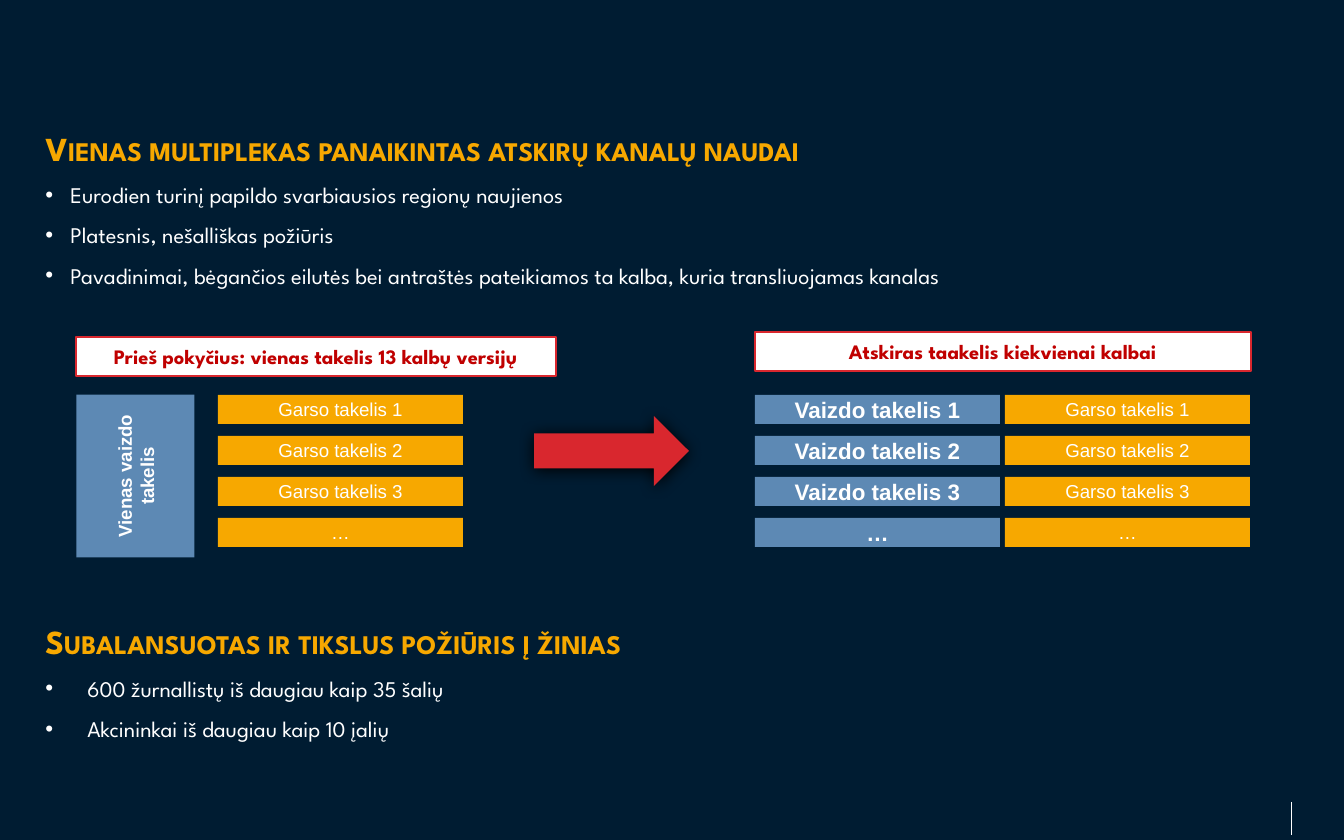
from dataclasses import dataclass
from typing import NamedTuple

from lxml.etree import SubElement
from pptx import Presentation
from pptx.dml.color import RGBColor
from pptx.enum.shapes import MSO_CONNECTOR, MSO_SHAPE
from pptx.enum.text import MSO_ANCHOR, MSO_AUTO_SIZE, PP_ALIGN
from pptx.oxml.ns import qn
from pptx.util import Emu, Pt

EMU_PER_PX = 914400 / 134.4


@dataclass(frozen=True)
class Theme:
    navy: str = "001C32"
    amber: str = "F7A800"
    blue: str = "5D89B4"
    red: str = "D9272E"
    dark_red: str = "C00000"
    white: str = "FFFFFF"
    black: str = "000000"
    display: str = "League Spartan"
    plain: str = "Arial"
    heading: int = 18
    body: int = 12
    caption: int = 11
    small: int = 10


class Box(NamedTuple):
    left: int
    top: int
    width: int
    height: int


class Style(NamedTuple):
    font: str
    size: int
    color: str
    bold: bool = False


class Column(NamedTuple):
    left: int
    label: str
    fill: str
    style: Style


T = Theme()
HEADING = Style(T.display, T.heading, T.amber, True)
LIST = Style(T.display, T.body, T.white)
CAPTION = Style(T.display, T.caption, T.dark_red, True)
AUDIO = Style(T.plain, T.small, T.white)
VIDEO = Style(T.plain, T.body, T.white, True)

ROW_TOP, ROW_PITCH, ROW_WIDTH, ROW_HEIGHT = 395, 41, 245, 29
ROW_SUFFIXES = ("1", "2", "3", None)
LABEL_INSET = 11

AUDIO_BEFORE = Column(218, "Garso takelis", T.amber, AUDIO)
COLUMNS_AFTER = (
    Column(755, "Vaizdo takelis", T.blue, VIDEO),
    Column(1005, "Garso takelis", T.amber, AUDIO),
)
CAPTIONS = (
    ("Prieš pokyčius: vienas takelis 13 kalbų versijų", Box(76, 337, 480, 39)),
    ("Atskiras taakelis kiekvienai kalbai", Box(755, 332, 496, 39)),
)
CHANNEL_POINTS = (
    "Eurodien turinį papildo svarbiausios regionų naujienos",
    "Platesnis, nešalliškas požiūris",
    "Pavadinimai, bėgančios eilutės bei antraštės pateikiamos ta kalba, "
    "kuria transliuojamas kanalas",
)
NEWS_POINTS = (
    "600 žurnallistų iš daugiau kaip 35 šalių",
    "Akcininkai iš daugiau kaip 10 įalių",
)


def px(value: int) -> Emu:
    return Emu(round(value * EMU_PER_PX))


def rgb(color: str) -> RGBColor:
    return RGBColor.from_string(color)


def set_all(target, values: dict) -> None:
    for name, value in values.items():
        setattr(target, name, value)


def place(shape, box: Box) -> None:
    set_all(shape, {name: px(v) for name, v in box._asdict().items()})


def write(p, text: str, style: Style):
    r = p.add_run()
    r.text = text
    set_all(r.font, {"name": style.font, "size": Pt(style.size), "bold": style.bold})
    r.font.color.rgb = rgb(style.color)
    return r


def add_block(shapes, box: Box, fill: str, kind=MSO_SHAPE.RECTANGLE):
    s = shapes.add_shape(kind, *map(px, box))
    s.shadow.inherit = False
    s.fill.solid()
    s.fill.fore_color.rgb = rgb(fill)
    s.line.fill.background()
    return s


def add_label(shapes, box: Box, fill: str, text: str, style: Style):
    s = add_block(shapes, box, fill)
    tf = s.text_frame
    sides = ("left", "top", "right", "bottom")
    set_all(tf, {f"margin_{side}": px(LABEL_INSET) for side in sides})
    set_all(tf, {"word_wrap": True, "vertical_anchor": MSO_ANCHOR.MIDDLE})
    p = tf.paragraphs[0]
    p.alignment = PP_ALIGN.CENTER
    write(p, text, style)
    return s


def add_column(shapes, column: Column) -> None:
    for i, suffix in enumerate(ROW_SUFFIXES):
        box = Box(column.left, ROW_TOP + i * ROW_PITCH, ROW_WIDTH, ROW_HEIGHT)
        text = f"{column.label} {suffix}" if suffix else "…"
        add_label(shapes, box, column.fill, text, column.style)


def add_caption(shapes, text: str, box: Box) -> None:
    s = add_block(shapes, box, T.white)
    s.line.color.rgb = rgb(T.red)
    s.line.width = Pt(1)
    s.text_frame.word_wrap = True
    p = s.text_frame.paragraphs[0]
    p.alignment = PP_ALIGN.CENTER
    write(p, text, CAPTION)


def add_shadow(shape) -> None:
    effects = shape._element.spPr.find(qn("a:effectLst"))
    shadow = SubElement(effects, qn("a:outerShdw"), blurRad=str(Pt(8.5)),
                        dist=str(Pt(1)), dir="5400000", rotWithShape="0")
    SubElement(shadow, qn("a:srgbClr"), val=T.black)


def fill_placeholder(ph, box: Box, heading: str = "", points=(), indent: int = 0) -> None:
    """Write an optional small-caps heading followed by bulleted points."""
    place(ph, box)
    tf = ph.text_frame
    set_all(tf, {"word_wrap": True, "auto_size": MSO_AUTO_SIZE.NONE,
                 "vertical_anchor": MSO_ANCHOR.TOP})
    lines = ([(heading, True)] if heading else []) + [(text, False) for text in points]
    for i, (text, is_heading) in enumerate(lines):
        p = tf.add_paragraph() if i else tf.paragraphs[0]
        pPr = p._p.get_or_add_pPr()
        hang = 0 if is_heading else px(indent)
        pPr.set("marL", str(hang))
        pPr.set("indent", str(-hang))
        if is_heading:
            SubElement(pPr, qn("a:buNone"))
        else:
            SubElement(pPr, qn("a:buChar"), char="•")
        set_all(p, {"alignment": PP_ALIGN.LEFT, "line_spacing": 1.5, "space_before": Pt(0)})
        r = write(p, text, HEADING if is_heading else LIST)
        if is_heading:
            r.font._element.set("cap", "small")


def add_page_rule(shapes) -> None:
    line = shapes.add_connector(MSO_CONNECTOR.STRAIGHT, px(1291), px(802), px(1291), px(835))
    line.line.color.rgb = rgb(T.white)
    line.line.width = Pt(0.5)
    SubElement(line._element.spPr, qn("a:effectLst"))


def main() -> None:
    prs = Presentation()
    prs.slide_width, prs.slide_height = px(1344), px(840)
    slide = prs.slides.add_slide(prs.slide_layouts.get_by_name("Two Content"))
    slide.background.fill.solid()
    slide.background.fill.fore_color.rgb = rgb(T.navy)
    shapes = slide.shapes

    title, channels, news = slide.placeholders
    fill_placeholder(title, Box(32, 101, 1258, 60),
                     "Vienas multiplekas panaikintas atskirų kanalų naudai")
    fill_placeholder(channels, Box(32, 161, 1258, 140), points=CHANNEL_POINTS, indent=25)
    fill_placeholder(news, Box(32, 594, 1038, 156),
                     "Subalansuotas ir tikslus požiūris į žinias", NEWS_POINTS, indent=42)

    add_page_rule(shapes)
    single_video = add_label(shapes, Box(54, 417, 163, 118), T.blue,
                             "Vienas vaizdo takelis", AUDIO._replace(bold=True))
    single_video.rotation = 270
    add_column(shapes.add_group_shape().shapes, AUDIO_BEFORE)
    add_shadow(add_block(shapes, Box(534, 416, 155, 70), T.red, MSO_SHAPE.RIGHT_ARROW))
    for column in COLUMNS_AFTER:
        add_column(shapes, column)
    for text, box in CAPTIONS:
        add_caption(shapes, text, box)

    prs.save("out.pptx")


if __name__ == "__main__":
    main()
